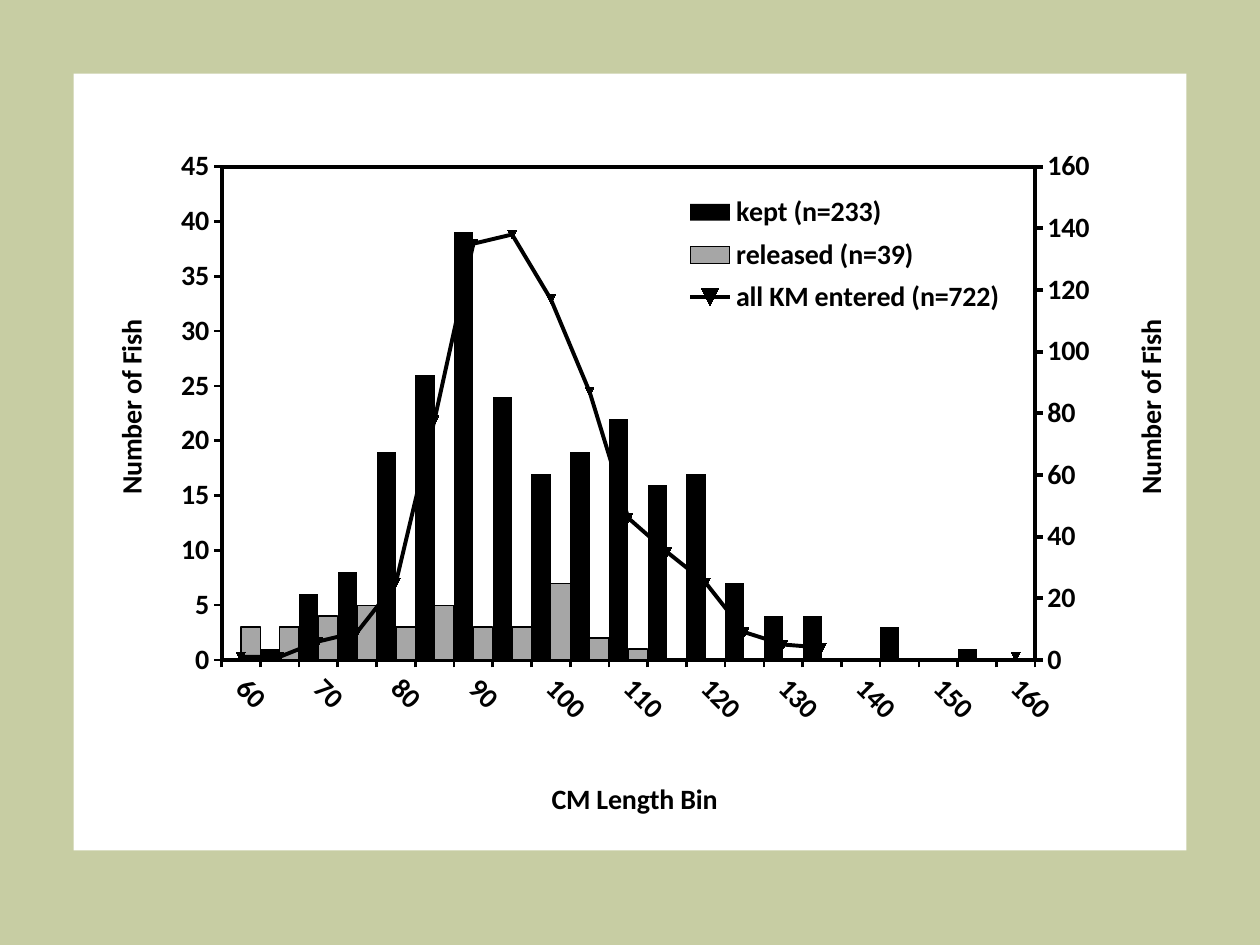
from copy import deepcopy
from dataclasses import dataclass
from typing import Any, Optional

from lxml import etree
from pptx import Presentation
from pptx import util as u
from pptx.chart.data import CategoryChartData
from pptx.dml.color import RGBColor
from pptx.enum import chart as c
from pptx.oxml import parse_xml
from pptx.oxml.ns import nsdecls, qn


@dataclass(frozen=True)
class Theme:
    background: str = "C7CDA3"
    panel: str = "FFFFFF"
    ink: str = "000000"
    released: str = "A6A6A6"
    font: str = "Calibri"
    base_font: str = "Times New Roman"
    label_size: int = 16
    base_size: int = 10
    thin: float = 0.75
    medium: float = 1.5
    thick: float = 2.25


@dataclass(frozen=True)
class Series:
    name: str
    values: tuple[Optional[int], ...]


@dataclass(frozen=True)
class Area:
    left: float
    top: float
    width: Optional[float] = None
    height: Optional[float] = None


THEME = Theme()
WIDTH, HEIGHT = u.Inches(10), u.Inches(7.5)
PANEL = Area(7 / 120, 7 / 90, 106 / 120, 74 / 90)
PLOT = Area(0.133, 0.12, 0.731, 0.635)
LEGEND = Area(0.543, 0.146, 0.3, 0.175)
BINS = range(60, 161, 5)
KEPT = Series("kept (n=233)", (0, 1, 6, 8, 19, 26, 39, 24, 17, 19, 22, 16, 17,
                               7, 4, 4, 0, 3, 0, 1, 0))
RELEASED = Series("released (n=39)", (3, 3, 4, 5, 3, 5, 3, 3, 7, 2, 1) + (None,) * 10)
ENTERED = Series("all KM entered (n=722)", (1, 1, 6, 9, 25, 78, 135, 138, 117, 87, 46,
                                            35, 25, 9, 5, 4) + (None,) * 4 + (1,))
LABEL = {"size": u.Pt(THEME.label_size), "bold": True, "name": THEME.font}


def apply(target: Any, values: dict[str, Any]) -> None:
    for name, value in values.items():
        setattr(target, name, value)


def style_font(font: Any, values: dict[str, Any]) -> None:
    apply(font, values)
    font.color.rgb = RGBColor.from_string(THEME.ink)


def style_fill(fill: Any, color: str) -> None:
    fill.solid()
    fill.fore_color.rgb = RGBColor.from_string(color)


def style_line(line: Any, width: float) -> None:
    style_fill(line.fill, THEME.ink)
    line.width = u.Pt(width)


def set_layout(parent: Any, index: int, area: Area, inner: bool = False) -> None:
    for old in parent.findall(qn("c:layout")):
        parent.remove(old)
    shares = {"x": area.left, "y": area.top, "w": area.width, "h": area.height}
    shares = {key: share for key, share in shares.items() if share is not None}
    target = '<c:layoutTarget val="inner"/>' if inner else ""
    modes = "".join(f'<c:{key}Mode val="edge"/>' for key in shares if key in "xy")
    sizes = "".join(f'<c:{key} val="{share}"/>' for key, share in shares.items())
    parent.insert(index, parse_xml(
        f'<c:layout {nsdecls("c")}><c:manualLayout>{target}{modes}{sizes}'
        '</c:manualLayout></c:layout>'))


def shape_properties(fill: str, line: str) -> Any:
    return parse_xml(f'<c:spPr {nsdecls("c", "a")}><a:solidFill><a:srgbClr val="{fill}"/>'
                     f'</a:solidFill>{line}</c:spPr>')


def style_axis(axis: Any, title: str, area: Area, rotation: int) -> None:
    apply(axis, {"has_major_gridlines": False, "major_tick_mark": c.XL_TICK_MARK.OUTSIDE,
                 "minor_tick_mark": c.XL_TICK_MARK.NONE})
    style_line(axis.format.line, THEME.medium)
    style_font(axis.tick_labels.font, LABEL)
    frame = axis.axis_title.text_frame
    frame.text = title
    style_font(frame.paragraphs[0].runs[0].font, LABEL)
    element = axis.axis_title.element
    element.find(".//" + qn("a:bodyPr")).set("rot", str(rotation * 60000))
    set_layout(element, 1, area)


def set_values(element: Any, values: dict[str, str]) -> None:
    for tag, value in values.items():
        element.find(".//" + qn(f"c:{tag}")).set("val", value)


def add_right_axis(chart: Any) -> None:
    plot_area = chart._chartSpace.find(".//" + qn("c:plotArea"))
    bars = plot_area.find(qn("c:barChart"))
    entered = bars.findall(qn("c:ser"))[-1]
    inverted = entered.find(qn("c:invertIfNegative"))
    if inverted is not None:
        entered.remove(inverted)
    lines = parse_xml(
        f'<c:lineChart {nsdecls("c")}><c:grouping val="standard"/><c:varyColors val="0"/>'
        '<c:marker val="1"/><c:axId val="3001"/><c:axId val="3002"/></c:lineChart>')
    lines.insert(2, entered)
    bars.addnext(lines)
    value_axis = plot_area.find(qn("c:valAx"))
    category_axis = plot_area.find(qn("c:catAx"))
    right, hidden = deepcopy(value_axis), deepcopy(category_axis)
    hidden.remove(hidden.find(qn("c:title")))
    set_values(hidden, {"axId": "3001", "crossAx": "3002", "delete": "1"})
    set_values(right, {"axId": "3002", "crossAx": "3001", "axPos": "r", "crosses": "max",
                       "max": "160", "majorUnit": "20"})
    right.find(qn("c:spPr")).find(qn("a:ln")).set("w", str(u.Pt(THEME.thick)))
    set_layout(right.find(qn("c:title")), 1, Area(0.946, 0.31))
    value_axis.addnext(right)
    right.addnext(hidden)


def style_series(chart: Any) -> None:
    bars, lines = chart.plots
    apply(bars, {"gap_width": 0, "overlap": 0, "vary_by_categories": False})
    kept, released = bars.series
    style_fill(kept.format.fill, THEME.ink)
    style_fill(released.format.fill, THEME.released)
    style_line(released.format.line, THEME.thin)
    entered = lines.series[0]
    entered.smooth = False
    style_line(entered.format.line, THEME.thick)
    entered.marker.size = 5
    style_fill(entered.marker.format.fill, THEME.ink)
    style_line(entered.marker.format.line, THEME.thin)


def add_length_chart(slide: Any) -> None:
    data = CategoryChartData(number_format="General")
    data.categories = [str(length) for length in BINS]
    for series in (KEPT, RELEASED, ENTERED):
        data.add_series(series.name, series.values)
    chart = slide.shapes.add_chart(
        c.XL_CHART_TYPE.COLUMN_CLUSTERED, int(WIDTH * PANEL.left), int(HEIGHT * PANEL.top),
        int(WIDTH * PANEL.width), int(HEIGHT * PANEL.height), data).chart
    style_font(chart.font, {"size": u.Pt(THEME.base_size), "name": THEME.base_font})
    apply(chart, {"has_title": False, "has_legend": True})
    apply(chart.legend, {"position": c.XL_LEGEND_POSITION.RIGHT, "include_in_layout": False})
    style_font(chart.legend.font, LABEL)
    set_layout(chart.legend._element, 1, LEGEND)

    style_axis(chart.category_axis, "CM Length Bin", Area(0.425, 0.903), 0)
    style_axis(chart.value_axis, "Number of Fish", Area(0.03, 0.31), -90)
    apply(chart.value_axis, {"minimum_scale": 0, "maximum_scale": 45, "major_unit": 5})
    chart.value_axis.tick_labels.number_format = "General"
    category = chart.category_axis._element
    category.find(qn("c:txPr")).find(qn("a:bodyPr")).set("rot", str(45 * 60000))
    skip = etree.Element(qn("c:tickLblSkip"), val="2")
    category.find(qn("c:noMultiLvlLbl")).addprevious(skip)

    add_right_axis(chart)
    style_series(chart)
    space = chart._chartSpace
    plot_area = space.find(".//" + qn("c:plotArea"))
    set_layout(plot_area, 0, PLOT, inner=True)
    border = (f'<a:ln w="{u.Pt(THEME.thick)}"><a:solidFill><a:srgbClr val="{THEME.ink}"/>'
              '</a:solidFill></a:ln>')
    plot_area.append(shape_properties(THEME.panel, border))
    space.find(qn("c:txPr")).addprevious(
        shape_properties(THEME.panel, "<a:ln><a:noFill/></a:ln>"))


def main() -> None:
    presentation = Presentation()
    apply(presentation, {"slide_width": WIDTH, "slide_height": HEIGHT})
    slide = presentation.slides.add_slide(presentation.slide_layouts[6])
    style_fill(slide.background.fill, THEME.background)
    add_length_chart(slide)
    presentation.save("out.pptx")


if __name__ == "__main__":
    main()
